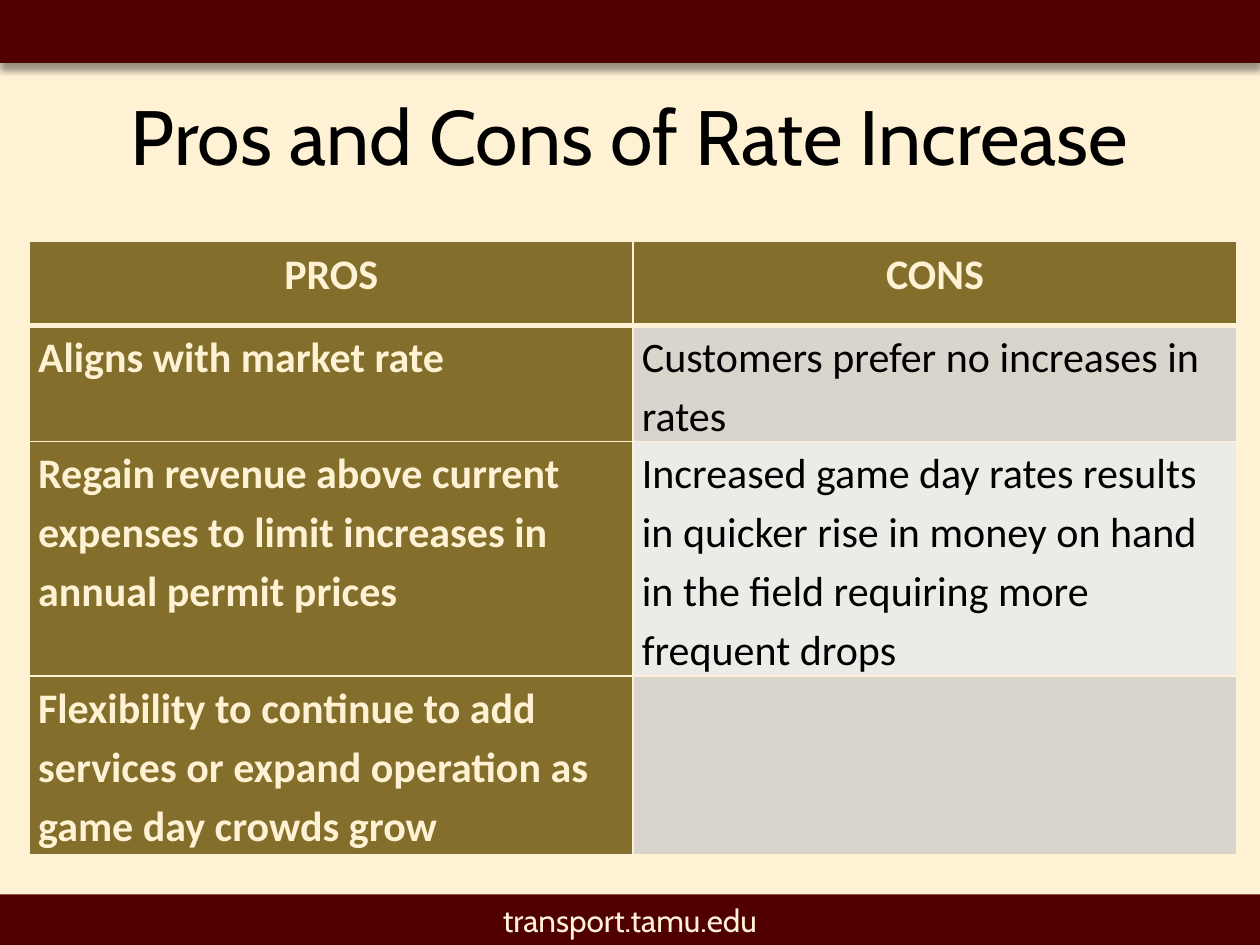
from dataclasses import dataclass

import pptx
import pptx.dml.color
import pptx.enum.shapes
import pptx.enum.text
import pptx.oxml
import pptx.oxml.ns
import pptx.util
from lxml import etree

Pt = pptx.util.Pt
ALIGN = pptx.enum.text.PP_ALIGN
MIDDLE = pptx.enum.text.MSO_ANCHOR.MIDDLE


@dataclass(frozen=True)
class Theme:
    cream: str = "FFF2D4"
    maroon: str = "500000"
    olive: str = "836E2C"
    black: str = "000000"
    bands: tuple = ("D9D5CD", "EDEBE8")
    heading_font: str = "Cabin"
    body_font: str = "Calibri"
    title_size: int = 44
    table_size: int = 24
    footer_size: int = 18
    rule: int = 1
    header_rule: int = 3


THEME = Theme()
COLUMNS = ("PROS", "CONS")
ARGUMENTS = (
    ("Aligns with market rate", "Customers prefer no increases in rates"),
    ("Regain revenue above current expenses to limit increases in annual permit prices",
     "Increased game day rates results in quicker rise in money on hand in the field "
     "requiring more frequent drops"),
    ("Flexibility to continue to add services or expand operation as game day crowds grow", ""),
)
ROW_HEIGHTS = (48, 48, 134, 102)


def rgb(color):
    return pptx.dml.color.RGBColor.from_string(color)


def write(frame, text, font, size, color, bold=False, align=ALIGN.LEFT):
    frame.word_wrap = True
    frame.text = text
    paragraph = frame.paragraphs[0]
    paragraph.alignment = align
    for run in paragraph.runs:
        run.font.name = font
        run.font.size = Pt(size)
        run.font.bold = bold
        run.font.color.rgb = rgb(color)
    return paragraph


def add_band(slide, box):
    band = slide.shapes.add_shape(
        pptx.enum.shapes.MSO_SHAPE.RECTANGLE, *map(Pt, box))
    band.shadow.inherit = False
    band.fill.solid()
    band.fill.fore_color.rgb = rgb(THEME.maroon)
    band.line.fill.background()
    return band


def add_top_band(slide, box):
    """Place the maroon band with a soft shadow below it."""
    band = add_band(slide, box)
    effects = band._element.spPr.find(pptx.oxml.ns.qn("a:effectLst"))
    effects.append(pptx.oxml.parse_xml(
        f'<a:outerShdw {pptx.oxml.ns.nsdecls("a")} blurRad="{Pt(4)}" dist="{Pt(3)}" '
        f'dir="5400000" rotWithShape="0"><a:srgbClr val="{THEME.black}">'
        '<a:alpha val="40000"/></a:srgbClr></a:outerShdw>'))


def add_footer(slide, box):
    band = add_band(slide, box)
    band.text_frame.vertical_anchor = MIDDLE
    write(band.text_frame, "transport.tamu.edu", THEME.heading_font,
          THEME.footer_size, THEME.cream, align=ALIGN.CENTER)


def add_title(slide, box):
    title = slide.shapes.add_textbox(*map(Pt, box))
    title.text_frame.vertical_anchor = MIDDLE
    write(title.text_frame, "Pros and Cons of Rate Increase", THEME.heading_font,
          THEME.title_size, THEME.black, align=ALIGN.CENTER)


def set_borders(cell, top, bottom):
    widths = {"lnL": THEME.rule, "lnR": THEME.rule, "lnT": top, "lnB": bottom}
    properties = cell._tc.get_or_add_tcPr()
    for side, width in widths.items():
        line = etree.SubElement(properties, pptx.oxml.ns.qn(f"a:{side}"), w=str(Pt(width)))
        fill = etree.SubElement(line, pptx.oxml.ns.qn("a:solidFill"))
        etree.SubElement(fill, pptx.oxml.ns.qn("a:srgbClr"), val=THEME.cream)


def add_comparison(slide, box):
    rows = (COLUMNS, *ARGUMENTS)
    table = slide.shapes.add_table(len(rows), len(COLUMNS), *map(Pt, box)).table
    for column in table.columns:
        column.width = Pt(box[2] / len(COLUMNS))
    for r, (row, height) in enumerate(zip(rows, ROW_HEIGHTS)):
        table.rows[r].height = Pt(height)
        for c, text in enumerate(row):
            cell = table.cell(r, c)
            is_header = r == 0
            emphasized = is_header or c == 0
            set_borders(cell,
                        top=THEME.header_rule if r == 1 else THEME.rule,
                        bottom=THEME.header_rule if is_header else THEME.rule)
            cell.fill.solid()
            cell.fill.fore_color.rgb = rgb(
                THEME.olive if emphasized else THEME.bands[(r - 1) % 2])
            cell.margin_left = cell.margin_right = Pt(5)
            cell.margin_top = cell.margin_bottom = Pt(0)
            if text:
                paragraph = write(
                    cell.text_frame, text, THEME.body_font, THEME.table_size,
                    THEME.cream if emphasized else THEME.black, emphasized,
                    ALIGN.CENTER if is_header else ALIGN.LEFT)
                paragraph.line_spacing = 1.15


def main():
    deck = pptx.Presentation()
    deck.slide_width, deck.slide_height = Pt(720), Pt(540)
    slide = deck.slides.add_slide(deck.slide_layouts[6])
    slide.background.fill.solid()
    slide.background.fill.fore_color.rgb = rgb(THEME.cream)
    add_top_band(slide, (0, 0, 720, 36))
    add_footer(slide, (0, 511, 720, 29))
    add_title(slide, (36, 42, 648, 70))
    add_comparison(slide, (16.8, 138, 690, sum(ROW_HEIGHTS)))
    deck.save("out.pptx")


if __name__ == "__main__":
    main()
